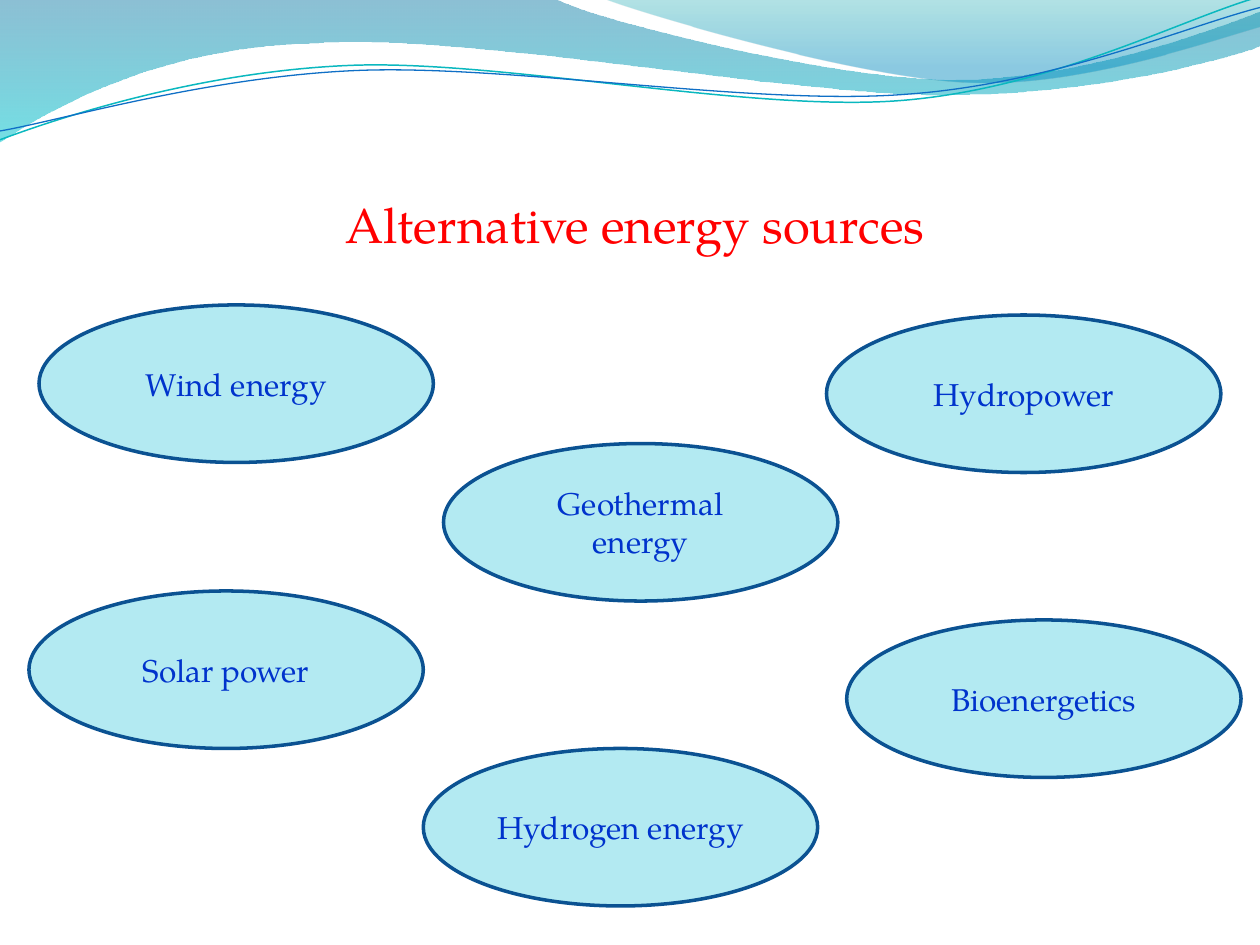
"""Build the slide of alternative energy sources: six ellipses under a wave banner."""
import math

from lxml import etree
from pptx import Presentation
from pptx import util as u
from pptx.dml.color import RGBColor
from pptx.enum import shapes, text
from pptx.oxml import ns

PALE, NAVY = RGBColor(0xB3, 0xEA, 0xF2), RGBColor(0x0B, 0x52, 0x92)
INK, RED = RGBColor(0x00, 0x33, 0xCC), RGBColor(0xFF, 0x00, 0x00)
DEEP, CYAN = RGBColor(0x00, 0x74, 0xA1), RGBColor(0x00, 0xC6, 0xCF)
TEAL, SKY = RGBColor(0x00, 0xA1, 0xA9), RGBColor(0x00, 0x8B, 0xBF)
AQUA, BLUE = RGBColor(0x0A, 0xB8, 0xBF), RGBColor(0x0F, 0x6F, 0xC6)
FONT = "TeX Gyre Pagella"
TILT = 2.7

presentation = Presentation()
presentation.slide_width, presentation.slide_height = u.Inches(10), u.Inches(7.5)
column, row = presentation.slide_width / 10, presentation.slide_height / 7.5
slide = presentation.slides.add_slide(presentation.slide_layouts[5])


def add_wave(start, segments, closed, tilt=0):
    """Draw segments of one point (straight) or three points (Bezier), tilted anticlockwise."""
    sine, cosine = math.sin(math.radians(tilt)), math.cos(math.radians(tilt))
    level = [[(round((5 + (x - 5) * cosine - (y - 0.57) * sine) * column),
               round((0.57 + (x - 5) * sine + (y - 0.57) * cosine) * row)) for x, y in segment]
             for segment in [[start], *segments]]
    anchors = [segment[-1] for segment in level]
    builder = slide.shapes.build_freeform(*anchors[0])
    builder.add_line_segments(anchors[1:], close=closed)
    shape = builder.convert_to_shape()
    shape.shadow.inherit = False
    shape.rotation = -tilt % 360
    left, top = (min(values) for values in zip(*anchors))
    lines = list(shape._element.spPr.iter(ns.qn("a:lnTo")))
    for line, segment in zip(lines, level[1:]):
        if len(segment) == 3:
            curve = etree.Element(ns.qn("a:cubicBezTo"))
            for x, y in segment:
                etree.SubElement(curve, ns.qn("a:pt"), x=str(x - left), y=str(y - top))
            line.getparent().replace(line, curve)
    return shape


def set_text(shape, words, size, color, anchor):
    """Write one centred paragraph in the slide's font."""
    frame = shape.text_frame
    frame.text = words
    frame.word_wrap, frame.vertical_anchor = True, anchor
    paragraph = frame.paragraphs[0]
    paragraph.alignment = text.PP_ALIGN.CENTER
    for name, value in {"name": FONT, "size": u.Pt(size), "bold": False}.items():
        setattr(paragraph.font, name, value)
    paragraph.font.color.rgb = color


bands = [
    ((0, 0), [[(4.4, -0.01)], [(4.76, 0.17), (6.64, 0.63), (7.58, 0.63)],
              [(8.53, 0.63), (9.58, 0.26), (10, 0.09)], [(10.01, 0.36)],
              [(9.83, 0.44), (8.7, 0.76), (7.46, 0.75)], [(6.22, 0.75), (3.82, 0.28), (2.57, 0.34)],
              [(1.29, 0.36), (0.46, 0.83), (-0.01, 1.13)]],
     [(0, DEEP, 45), (1, CYAN, 55)]),
    ((4.79, -0.01), [[(5.09, 0.11), (6.82, 0.62), (7.69, 0.65)],
                     [(8.56, 0.69), (9.61, 0.32), (10, 0.21)], [(10, 0)]],
     [(0, TEAL, 30), (0.8, SKY, 45)]),
]
for start, segments, stops in bands:
    band = add_wave(start, segments, True)
    band.line.fill.background()
    band.fill.gradient()
    band.fill.gradient_angle = 270
    for stop, (position, color, _) in zip(band.fill.gradient_stops, stops):
        stop.position, stop.color.rgb = position, color
    for element, (_, _, opacity) in zip(band._element.spPr.iter(ns.qn("a:srgbClr")), stops):
        etree.SubElement(element, ns.qn("a:alpha"), val=str(opacity * 1000))

strands = [
    ((0, 1.11), [[(0.48, 0.93), (1.58, 0.57), (2.77, 0.52)], [(3.95, 0.47), (5.93, 0.89), (7.13, 0.8)],
                 [(8.33, 0.71), (9.38, 0.15), (9.98, -0.02)]], AQUA, 0.85),
    ((0, 1.04), [[(0.47, 0.96), (1.64, 0.61), (2.83, 0.56)], [(4.03, 0.51), (5.97, 0.84), (7.17, 0.75)],
                 [(8.36, 0.67), (9.41, 0.21), (10, 0.06)]], BLUE, 0.75),
]
for start, segments, color, width in strands:
    strand = add_wave(start, segments, False, TILT)
    strand.fill.background()
    strand.line.color.rgb, strand.line.width = color, u.Pt(width)

sources = [
    ("Wind energy", 0.31, 2.42), ("Geothermal energy", 3.52, 3.52), ("Solar power", 0.23, 4.69),
    ("Bioenergetics", 6.72, 4.92), ("Hydropower", 6.56, 2.5), ("Hydrogen energy", 3.36, 5.94),
]
for words, left, top in sources:
    ellipse = slide.shapes.add_shape(shapes.MSO_SHAPE.OVAL, round(left * column), round(top * row),
                                     round(3.13 * column), round(1.25 * row))
    ellipse.shadow.inherit = False
    ellipse.fill.solid()
    ellipse.fill.fore_color.rgb = PALE
    ellipse.line.color.rgb, ellipse.line.width = NAVY, u.Pt(2)
    set_text(ellipse, words, 18, INK, text.MSO_ANCHOR.MIDDLE)

title = slide.shapes.title
place = {"left": 1.56 * column, "top": 1.49 * row, "width": 6.56 * column, "height": 0.57 * row}
for name, value in place.items():
    setattr(title, name, round(value))
set_text(title, "Alternative energy sources", 28, RED, text.MSO_ANCHOR.TOP)
title.text_frame.margin_left = u.Inches(0.5)
title.text_frame.auto_size = text.MSO_AUTO_SIZE.SHAPE_TO_FIT_TEXT
slide.shapes._spTree.append(title._element)

presentation.save("out.pptx")
